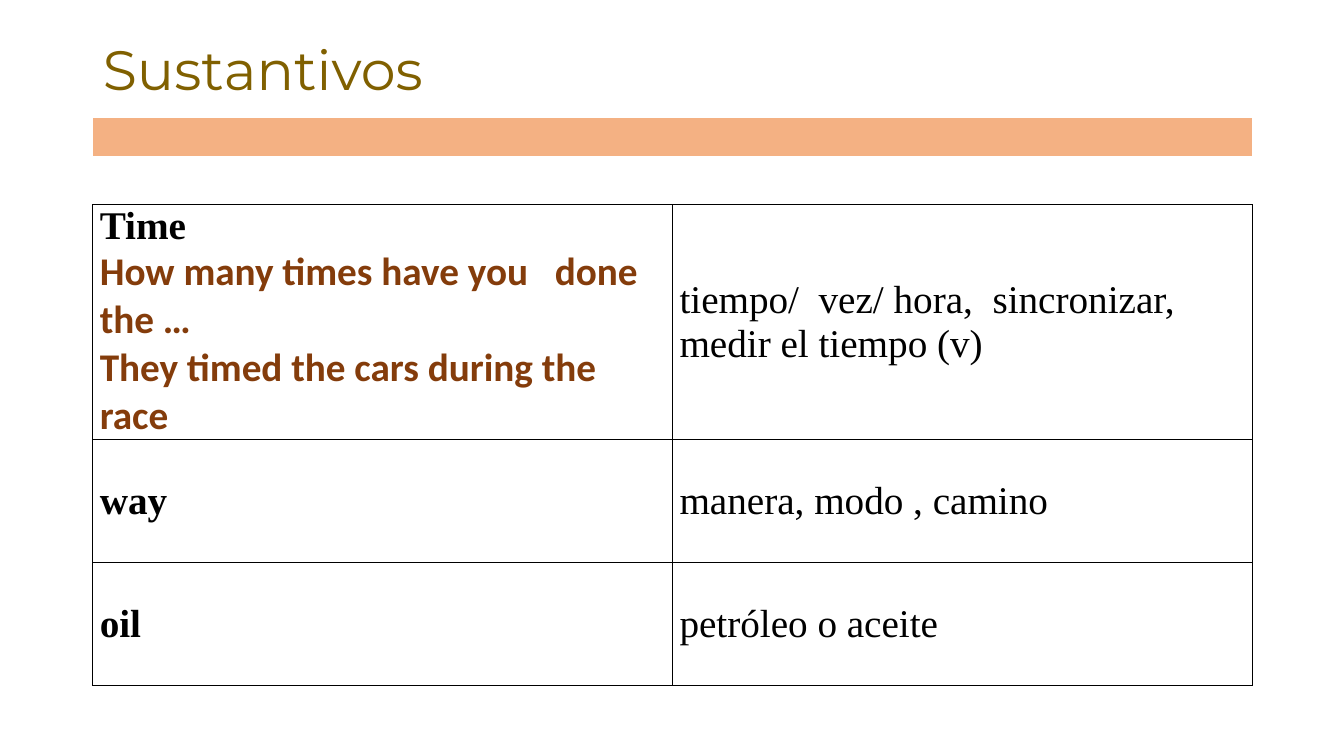
from lxml import etree
from pptx import Presentation
from pptx.dml.color import RGBColor
from pptx.enum import text
from pptx.oxml import ns
from pptx.util import Inches, Pt

COLORS = {
    "title": "806000",
    "band": "F4B183",
    "paper": "FFFFFF",
    "ink": "000000",
    "example": "843C0B",
}
LEFT, WIDTH = 0.92, 11.5

TERM = {"name": "Times New Roman", "size": Pt(28), "bold": True, "color": "ink"}
EXAMPLE = {**TERM, "name": "Calibri", "color": "example"}
MEANING = {**TERM, "bold": False}
TITLE = {"name": "Montserrat", "size": Pt(39.6), "bold": False, "color": "title"}

# Each row: paragraphs of the English cell, paragraphs of the Spanish cell
VOCABULARY = [
    (
        [
            ("Time", TERM),
            ("How many times have you   done the …", EXAMPLE),
            ("They timed the cars during the race", EXAMPLE),
        ],
        [("tiempo/  vez/ hora,  sincronizar, medir el tiempo (v)", MEANING)],
    ),
    ([("way", TERM)], [("manera, modo , camino", MEANING)]),
    ([("oil", TERM)], [("petróleo o aceite", MEANING)]),
]
ROW_HEIGHTS = [2.33, 1.22, 1.22]


def rgb(key):
    return RGBColor.from_string(COLORS[key])


def format_font(font, style):
    for attribute, value in style.items():
        if attribute == "color":
            font.color.rgb = rgb(value)
        else:
            setattr(font, attribute, value)


def write_paragraphs(frame, paragraphs):
    for index, (wording, style) in enumerate(paragraphs):
        paragraph = frame.paragraphs[0] if index == 0 else frame.add_paragraph()
        run = paragraph.add_run()
        run.text = wording
        format_font(run.font, style)


def set_borders(cell, color, widths):
    """Draw the cell borders; widths are points for left, right, top, bottom."""
    properties = cell._tc.get_or_add_tcPr()
    for position, (side, width) in enumerate(zip("LRTB", widths)):
        line = etree.Element(ns.qn(f"a:ln{side}"), w=str(Pt(width)))
        fill = etree.SubElement(line, ns.qn("a:solidFill"))
        etree.SubElement(fill, ns.qn("a:srgbClr"), val=COLORS[color])
        properties.insert(position, line)


def format_cell(cell, fill, border, widths):
    cell.fill.solid()
    cell.fill.fore_color.rgb = rgb(fill)
    cell.vertical_anchor = text.MSO_ANCHOR.MIDDLE
    margins = {
        "margin_left": Inches(0.07),
        "margin_right": Inches(0.07),
        "margin_top": 0,
        "margin_bottom": 0,
    }
    for attribute, value in margins.items():
        setattr(cell, attribute, value)
    set_borders(cell, border, widths)


def add_grid(slide, top, row_heights, column_count):
    frame = slide.shapes.add_table(
        len(row_heights), column_count,
        Inches(LEFT), Inches(top), Inches(WIDTH), Inches(sum(row_heights)),
    )
    grid = frame.table
    grid.first_row = grid.horz_banding = False
    for row, height in zip(grid.rows, row_heights):
        row.height = Inches(height)
    return grid


def add_title(slide, wording):
    title = slide.shapes.title
    place = {"left": LEFT, "top": 0.4, "width": WIDTH, "height": 0.63}
    for attribute, value in place.items():
        setattr(title, attribute, Inches(value))
    frame = title.text_frame
    frame.word_wrap = True
    frame.vertical_anchor = text.MSO_ANCHOR.MIDDLE
    write_paragraphs(frame, [(wording, TITLE)])
    frame.paragraphs[0].alignment = text.PP_ALIGN.LEFT
    frame.paragraphs[0].line_spacing = 0.9


def add_band(slide):
    cell = add_grid(slide, 1.16, [0.41], 1).cell(0, 0)
    format_cell(cell, "band", "paper", (1, 1, 1, 3))


def add_vocabulary(slide):
    grid = add_grid(slide, 2.03, ROW_HEIGHTS, 2)
    for row, entry in zip(grid.rows, VOCABULARY):
        for cell, paragraphs in zip(row.cells, entry):
            format_cell(cell, "paper", "ink", (1, 1, 1, 1))
            write_paragraphs(cell.text_frame, paragraphs)


def main():
    deck = Presentation()
    deck.slide_width, deck.slide_height = Inches(13.33), Inches(7.5)
    slide = deck.slides.add_slide(deck.slide_layouts[5])

    # Heading and coloured band
    add_title(slide, "Sustantivos")
    add_band(slide)

    # Word list with translations
    add_vocabulary(slide)

    deck.save("out.pptx")


if __name__ == "__main__":
    main()
